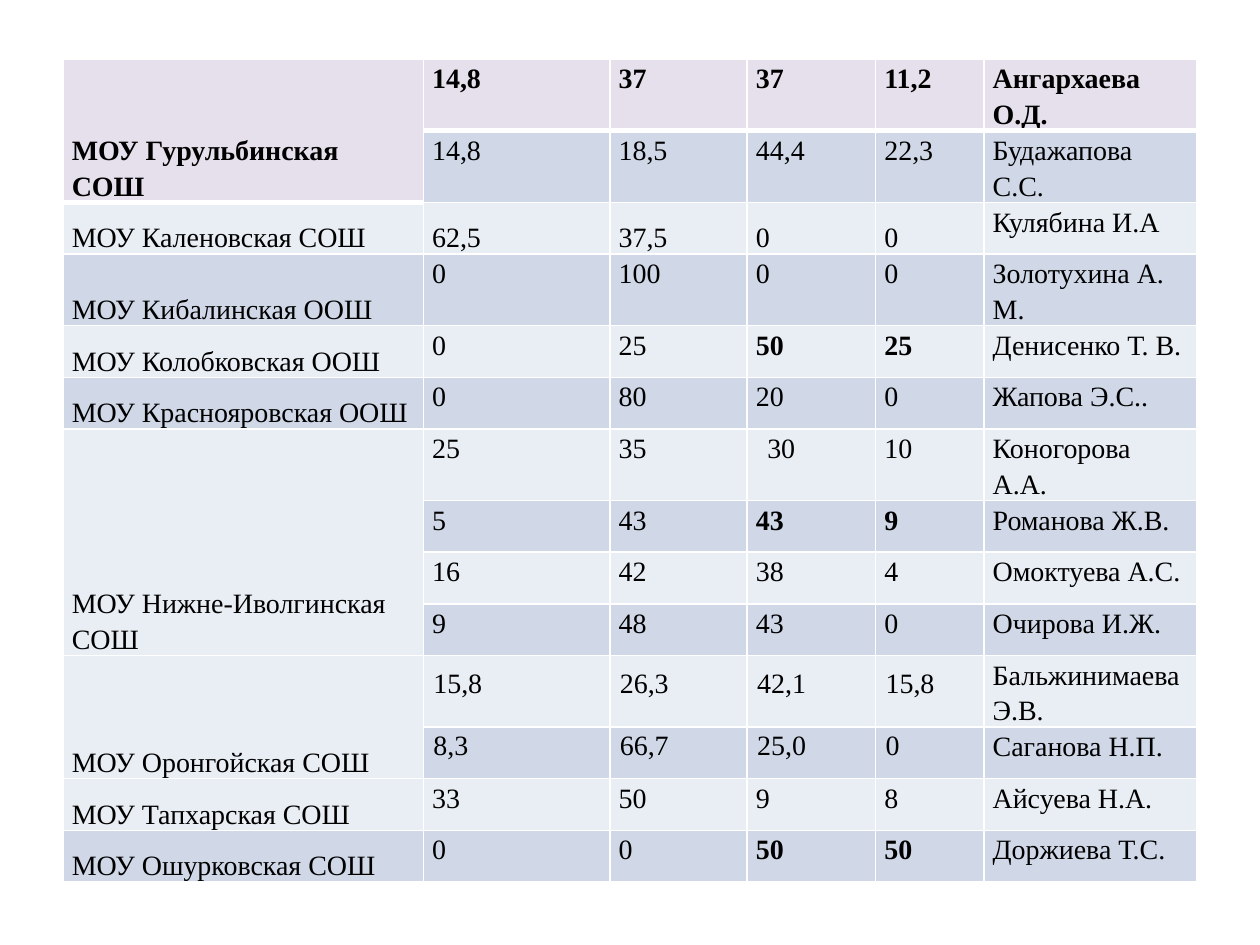
from lxml import etree
from pptx import Presentation, util as u
from pptx.dml.color import RGBColor
from pptx.enum import text
from pptx.oxml.ns import qn

COLORS = {"header": "E6E0EC", "dark": "D0D8E8", "light": "E9EDF4",
          "border": "FFFFFF", "text": "000000"}
FONT = "Times New Roman"
COLUMNS = [2.86, 1.48, 1.09, 1.02, 0.86, 1.69]
ROW_HEIGHT = 0.41
BOX = (0.5, 0.47, 9, 5.74)
RESULTS = [
    ("МОУ Гурульбинская СОШ", "14,8", "37", "37", "11,2", "Ангархаева О.Д."),
    (None, "14,8", "18,5", "44,4", "22,3", "Будажапова С.С."),
    ("МОУ Каленовская СОШ", "62,5", "37,5", "0", "0", "Кулябина И.А"),
    ("МОУ Кибалинская ООШ", "0", "100", "0", "0", "Золотухина А. М."),
    ("МОУ Колобковская ООШ", "0", "25", "50", "25", "Денисенко Т. В."),
    ("МОУ Краснояровская ООШ", "0", "80", "20", "0", "Жапова Э.С.."),
    ("МОУ Нижне-Иволгинская СОШ", "25", "35", "30", "10", "Коногорова А.А."),
    (None, "5", "43", "43", "9", "Романова Ж.В."),
    (None, "16", "42", "38", "4", "Омоктуева А.С."),
    (None, "9", "48", "43", "0", "Очирова И.Ж."),
    ("МОУ Оронгойская СОШ", "15,8", "26,3", "42,1", "15,8", "Бальжинимаева Э.В."),
    (None, "8,3", "66,7", "25,0", "0", "Саганова Н.П."),
    ("МОУ Тапхарская СОШ", "33", "50", "9", "8", "Айсуева Н.А."),
    ("МОУ Ошурковская СОШ", "0", "0", "50", "50", "Доржиева Т.С."),
]
BOLD_ROWS = (4, 7, 13)
BOLD_COLUMNS = (3, 4)
COMPACT_ROWS = (10, 11)
LAST_ROW = len(RESULTS) - 1


def set_borders(cell, row, column):
    """Draw white cell edges, heavier under the header cells."""
    header_end = 1 if column == 0 else 0
    widths = {"lnL": 1, "lnR": 1,
              "lnT": 3 if row == header_end + 1 else 1,
              "lnB": 3 if row <= header_end else 1}
    properties = cell._tc.get_or_add_tcPr()
    for edge, width in widths.items():
        line = etree.SubElement(properties, qn(f"a:{edge}"), w=str(u.Pt(width)))
        fill = etree.SubElement(line, qn("a:solidFill"))
        etree.SubElement(fill, qn("a:srgbClr"), val=COLORS["border"])


def space_after(row, column):
    """Return the points of space below the paragraph of a cell."""
    if column == 0 or row == LAST_ROW or (6 <= row <= 9 and column <= 3):
        return 0
    return 8 if row == 3 else 10


def set_text(cell, row, column, wording):
    """Write the wording of a cell and format it by its place."""
    compact = row in COMPACT_ROWS and 1 <= column <= 4
    if column == 0 or (row == 2 and column <= 4):
        cell.vertical_anchor = text.MSO_ANCHOR.BOTTOM
    elif compact:
        cell.vertical_anchor = text.MSO_ANCHOR.MIDDLE
    paragraph = cell.text_frame.paragraphs[0]
    paragraph.text = wording
    paragraph.line_spacing = u.Pt(9.9) if compact else 1.15
    paragraph.space_before = u.Pt(1.4 if compact else 0)
    paragraph.space_after = u.Pt(space_after(row, column))
    if compact:
        paragraph._p.get_or_add_pPr().set("marL", str(u.Inches(0.01)))
    if (row, column) == (6, 3):
        paragraph._p.get_or_add_pPr().set("indent", str(u.Inches(0.09)))
    font = paragraph.runs[0].font
    font.name, font.size = FONT, u.Pt(16)
    font.bold = row == 0 or (row in BOLD_ROWS and column in BOLD_COLUMNS)
    font.color.rgb = RGBColor.from_string(COLORS["text"])


def merge_schools(table):
    """Join each school cell with the unnamed rows below it."""
    starts = [row for row, result in enumerate(RESULTS) if result[0]]
    for start, following in zip(starts, starts[1:] + [len(RESULTS)]):
        if following - start > 1:
            table.cell(start, 0).merge(table.cell(following - 1, 0))


def add_results_table(slide, box):
    """Place the table of school results in the box."""
    frame = slide.shapes.add_table(len(RESULTS), len(COLUMNS), *map(u.Inches, box))
    table = frame.table
    for column, width in zip(table.columns, COLUMNS):
        column.width = u.Inches(width)
    for row in table.rows:
        row.height = u.Inches(ROW_HEIGHT)
    merge_schools(table)
    for row, result in enumerate(RESULTS):
        band = "header" if row == 0 else "dark" if row % 2 else "light"
        for column, wording in enumerate(result):
            cell = table.cell(row, column)
            cell.margin_left = cell.margin_right = u.Inches(0.07)
            cell.margin_top = cell.margin_bottom = 0
            set_borders(cell, row, column)
            cell.fill.solid()
            cell.fill.fore_color.rgb = RGBColor.from_string(COLORS[band])
            if wording:
                set_text(cell, row, column, wording)


def main():
    """Build the presentation and save it."""
    presentation = Presentation()
    presentation.slide_width, presentation.slide_height = u.Inches(10), u.Inches(7.5)
    slide = presentation.slides.add_slide(presentation.slide_layouts[6])
    add_results_table(slide, BOX)
    presentation.save("out.pptx")


if __name__ == "__main__":
    main()
